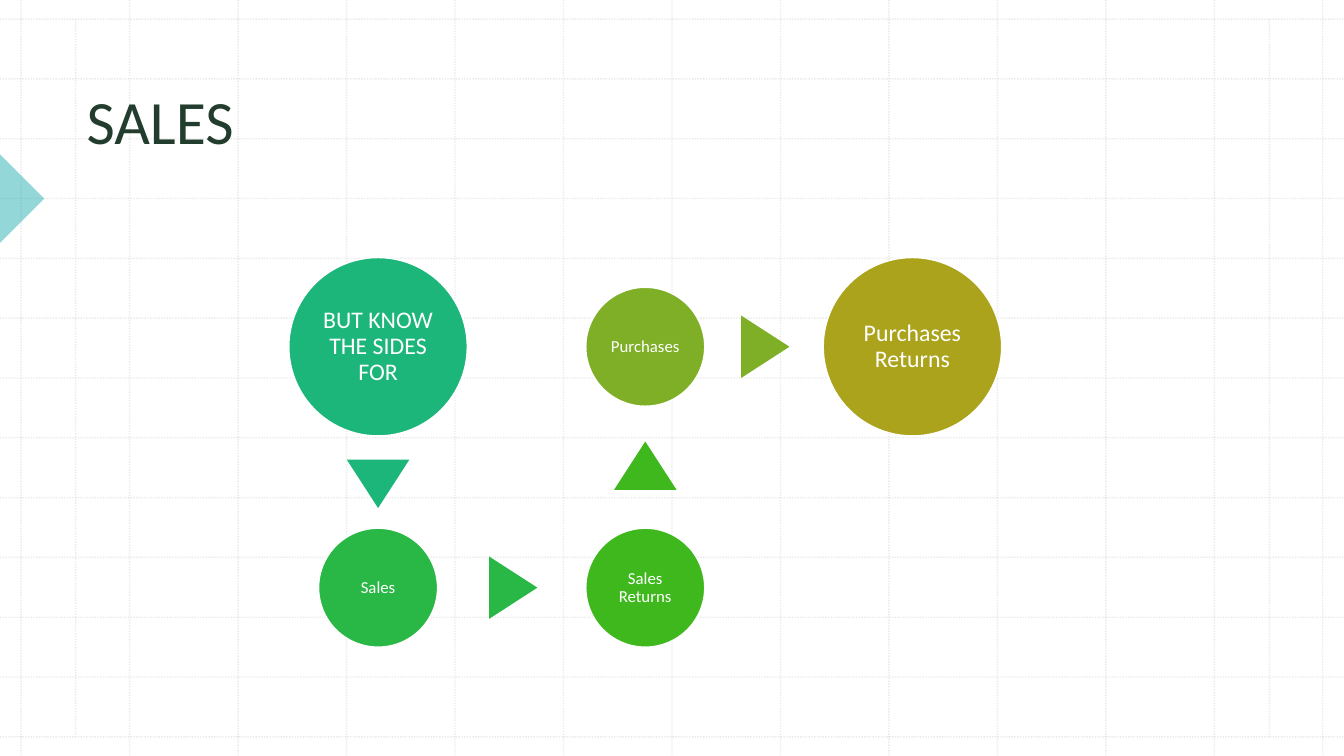
from lxml.etree import SubElement
from pptx import Presentation
from pptx.dml.color import RGBColor
from pptx.enum.dml import MSO_LINE
from pptx.enum.shapes import MSO_CONNECTOR, MSO_SHAPE as Shape
from pptx.enum.text import MSO_ANCHOR as Anchor, PP_ALIGN as Align
from pptx.oxml.ns import qn
from pptx.util import Inches, Pt

WIDTH, HEIGHT = 13.33, 7.5


def paint(color_format, color, opacity=100):
    color_format.rgb = RGBColor.from_string(color)
    if opacity < 100:
        # The parent fill holds the colour element that takes the alpha
        fill = color_format._xFill
        SubElement(fill.find(qn("a:srgbClr")), qn("a:alpha"), val=str(opacity * 1000))


def write(box, text, size, color, align, anchor, inset, top):
    frame = box.text_frame
    frame.word_wrap = True
    frame.vertical_anchor = anchor
    frame.margin_left = frame.margin_right = Inches(inset)
    frame.margin_top, frame.margin_bottom = Inches(top), Inches(inset)
    para = frame.paragraphs[0]
    para.alignment, para.line_spacing = align, 0.9
    span = para.add_run()
    span.text = text
    span.font.name, span.font.size = "Calibri", Pt(size)
    paint(span.font.color, color)


deck = Presentation()
deck.slide_width, deck.slide_height = Inches(WIDTH), Inches(HEIGHT)
page = deck.slides.add_slide(deck.slide_layouts[6])

# Dotted background grid: 13 columns, 13 rows and two inner margins
LEFT, TOP, STEPS = 0.21, 0.19, 12
column_step = (WIDTH - 2 * LEFT) / STEPS
row_step = (HEIGHT - 2 * TOP) / STEPS
columns = [LEFT + i * column_step for i in range(STEPS + 1)]
rows = [TOP + i * row_step for i in range(STEPS + 1)]
grid_lines = [(x, 0, x, HEIGHT) for x in columns]
grid_lines += [(0, y, WIDTH, y) for y in rows]
grid_lines += [(x, TOP, x, HEIGHT - TOP) for x in (0.75, 12.59)]
for ends in grid_lines:
    rule = page.shapes.add_connector(MSO_CONNECTOR.STRAIGHT, *map(Inches, ends))
    rule.line.width = Pt(1)
    paint(rule.line.color, "BCBCBC")
    rule.line.dash_style = MSO_LINE.ROUND_DOT
    for color in rule.line._ln.iter(qn("a:srgbClr")):
        SubElement(color, qn("a:alpha"), val="30000")
    SubElement(rule._element.spPr, qn("a:effectLst"))

# Half-transparent marker on the left edge
marker = page.shapes.add_shape(
    Shape.RIGHT_TRIANGLE, *map(Inches, (-0.31, 1.66, 0.62, 0.62)))
marker.rotation = 225
marker.shadow.inherit = False
marker.line.fill.background()
marker.fill.solid()
paint(marker.fill.fore_color, "28B0B4")
for color in marker._element.spPr.iter(qn("a:srgbClr")):
    SubElement(color, qn("a:alpha"), val="50000")

# Title
title = page.shapes.add_textbox(*map(Inches, (0.76, 0.79, 11.29, 1.51)))
write(title, "SALES", 44, "223C2D", Align.LEFT, Anchor.TOP, inset=0.1, top=0.12)

# Flow of circles on three columns and two rows, each with its outgoing arrow
flow_x = [3.75 + 2.65 * i for i in range(3)]
flow_y = [3.44, 5.83]
BIG, SMALL = (1.77, 17), (1.18, 12)
steps = [
    ("BUT KNOW THE SIDES FOR", 0, 0, BIG, "1CB67A", (3.75, 4.8, 180)),
    ("Sales", 0, 1, SMALL, "29B745", (5.09, 5.83, 90)),
    ("Sales Returns", 1, 1, SMALL, "3FB81D", (6.4, 4.62, 0)),
    ("Purchases", 1, 0, SMALL, "7EAF27", (7.59, 3.44, 90)),
    ("Purchases Returns", 2, 0, BIG, "ABA31B", None),
]
for text, column, row, (diameter, size), color, arrow in steps:
    parts = [(Shape.OVAL, flow_x[column], flow_y[row], diameter, diameter, 0)]
    if arrow:
        x, y, angle = arrow
        parts.append((Shape.ISOSCELES_TRIANGLE, x, y, 0.62, 0.48, angle))
    for kind, x, y, width, height, angle in parts:
        part = page.shapes.add_shape(
            kind, *map(Inches, (x - width / 2, y - height / 2, width, height)))
        part.rotation = angle
        part.shadow.inherit = False
        part.fill.solid()
        paint(part.fill.fore_color, color)
        if kind == Shape.OVAL:
            part.line.width = Pt(1)
            paint(part.line.color, "FFFFFF")
            write(part, text, size, "FFFFFF", Align.CENTER, Anchor.MIDDLE,
                  inset=0.02, top=0.02)
        else:
            part.line.fill.background()

deck.save("out.pptx")
